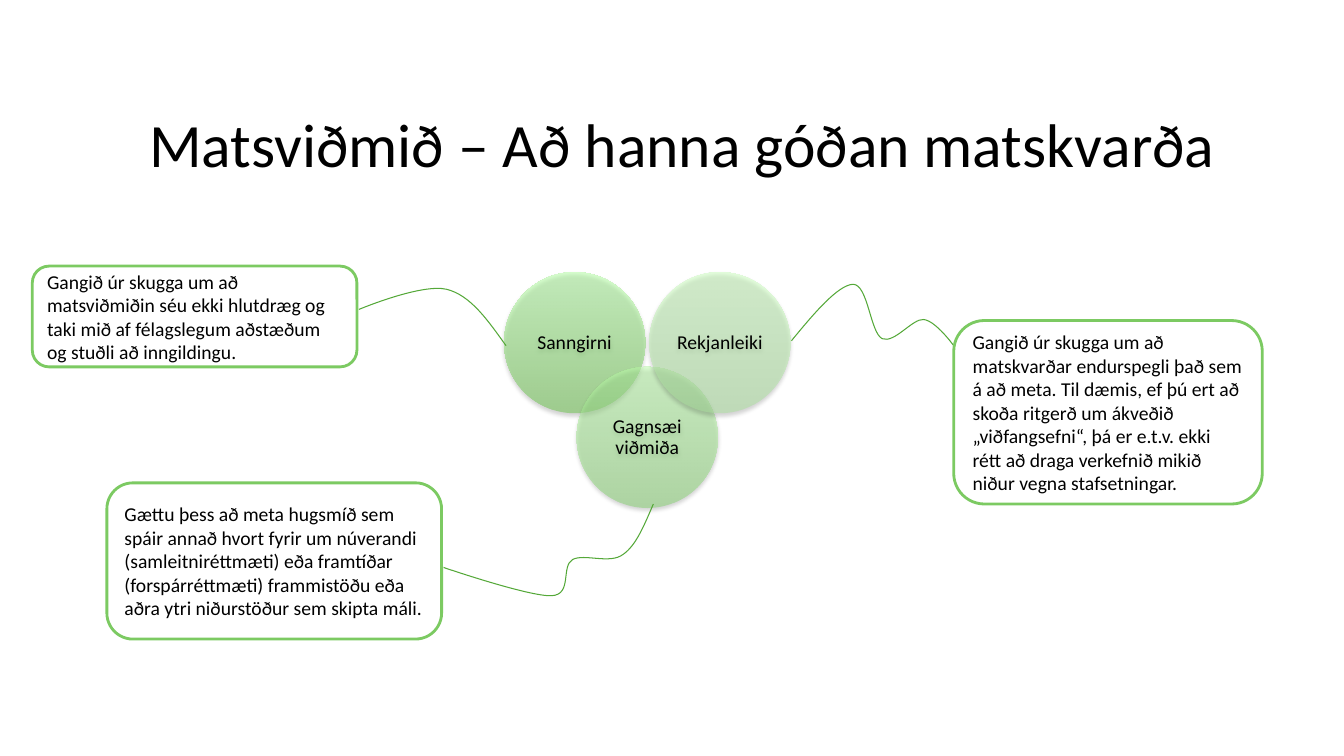
import pptx
import pptx.dml.color
import pptx.enum.shapes
import pptx.enum.text
import pptx.oxml.ns
import pptx.util
from lxml import etree
from pptx.util import Inches

COLORS = {"text": "000000", "box": "FFFFFF", "border": "7CCA62", "curve": "54A838"}
FONT = "Calibri"
SHAPES = pptx.enum.shapes.MSO_SHAPE
ALIGN = pptx.enum.text.PP_ALIGN
QN = pptx.oxml.ns.qn

CIRCLE_SIZE = 1.4
CIRCLES = [
    ("Sanngirni", 5, 2.7, "69C449", "B0FF9F"),
    ("Gagnsæi viðmiða", 5.72, 3.64, "87D372", "BCFFAA"),
    ("Rekjanleiki", 6.44, 2.7, "ABE19E", "CBFFBD"),
]
NOTES = [
    ((0.32, 2.64, 3.22, 1),
     "Gangið úr skugga um að matsviðmiðin séu ekki hlutdræg og taki mið af "
     "félagslegum aðstæðum og stuðli að inngildingu."),
    ((1.06, 4.79, 3.32, 1.55),
     "Gættu þess að meta hugsmíð sem spáir annað hvort fyrir um núverandi "
     "(samleitniréttmæti) eða framtíðar (forspárréttmæti) frammistöðu eða "
     "aðra ytri niðurstöður sem skipta máli."),
    ((9.46, 3.18, 3.06, 1.82),
     "Gangið úr skugga um að matskvarðar endurspegli það sem á að meta. Til "
     "dæmis, ef þú ert að skoða ritgerð um ákveðið „viðfangsefni“, þá er "
     "e.t.v. ekki rétt að draga verkefnið mikið niður vegna stafsetningar."),
]
# Each curve: start point, then three Bézier points per segment.
CURVES = [
    [(7.85, 3.38), (8.08, 3.1), (8.31, 2.83), (8.46, 2.82),
     (8.61, 2.82), (8.63, 3.3), (8.75, 3.36),
     (8.87, 3.41), (9.05, 3.16), (9.16, 3.17),
     (9.28, 3.18), (9.46, 3.43), (9.46, 3.43)],
    [(5.02, 3.43), (4.84, 3.18), (4.67, 2.93), (4.43, 2.87),
     (4.18, 2.81), (3.56, 3.07), (3.56, 3.07)],
    [(6.48, 5), (6.39, 5.21), (6.31, 5.41), (6.18, 5.5),
     (6.05, 5.6), (5.8, 5.49), (5.68, 5.55),
     (5.56, 5.62), (5.68, 5.9), (5.47, 5.91),
     (5.25, 5.92), (4.4, 5.63), (4.4, 5.63)],
]


def rgb(value):
    return pptx.dml.color.RGBColor.from_string(value)


class SlideBuilder:
    """Draws styled elements on the current page."""

    def __init__(self, page):
        self.page = page

    def set_text(self, shape, text, size, align, spacing=1.0, inset=(0.1, 0.05)):
        frame = shape.text_frame
        frame.word_wrap = True
        frame.vertical_anchor = pptx.enum.text.MSO_ANCHOR.MIDDLE
        frame.margin_left = frame.margin_right = Inches(inset[0])
        frame.margin_top = frame.margin_bottom = Inches(inset[1])
        frame.text = text
        para = frame.paragraphs[0]
        para.alignment = align
        para.line_spacing = spacing
        span = para.runs[0]
        span.font.name = FONT
        span.font.size = pptx.util.Pt(size)
        span.font.color.rgb = rgb(COLORS["text"])

    def title(self, text, place):
        box = self.page.shapes.add_textbox(*map(Inches, place))
        self.set_text(box, text, 44, ALIGN.CENTER, 0.9)

    def circle(self, text, left, top, dark, light):
        circle = self.page.shapes.add_shape(
            SHAPES.OVAL, Inches(left), Inches(top),
            Inches(CIRCLE_SIZE), Inches(CIRCLE_SIZE))
        circle.line.fill.background()
        circle.fill.gradient()
        circle.fill.gradient_angle = 90
        for stop, color in zip(circle.fill.gradient_stops, (dark, light)):
            stop.color.rgb = rgb(color)
        for color in circle._element.spPr.iter(QN("a:srgbClr")):
            etree.SubElement(color, QN("a:alpha"), val="49000")
        self.soft_shadow(circle)
        self.set_text(circle, text, 14, ALIGN.CENTER, 0.9, (0.06, 0.06))

    def soft_shadow(self, shape):
        shape.shadow.inherit = False
        effects = shape._element.spPr.find(QN("a:effectLst"))
        shadow = etree.SubElement(
            effects, QN("a:outerShdw"), blurRad=str(pptx.util.Pt(3.1)),
            dist=str(pptx.util.Pt(1.8)), dir="5400000", rotWithShape="0")
        color = etree.SubElement(shadow, QN("a:srgbClr"), val=COLORS["text"])
        etree.SubElement(color, QN("a:alpha"), val="35000")

    def note(self, place, text):
        box = self.page.shapes.add_shape(
            SHAPES.ROUNDED_RECTANGLE, *map(Inches, place))
        box.shadow.inherit = False
        box.fill.solid()
        box.fill.fore_color.rgb = rgb(COLORS["box"])
        box.line.color.rgb = rgb(COLORS["border"])
        box.line.width = pptx.util.Pt(2)
        self.set_text(box, text, 14, ALIGN.LEFT)

    def curve(self, points):
        """Draw a freeform, then merge every three line steps into one Bézier."""
        start, *rest = [(Inches(x), Inches(y)) for x, y in points]
        builder = self.page.shapes.build_freeform(*start)
        builder.add_line_segments(rest, close=False)
        shape = builder.convert_to_shape()
        shape.shadow.inherit = False
        shape.fill.background()
        shape.line.color.rgb = rgb(COLORS["curve"])
        shape.line.width = pptx.util.Pt(0.75)
        outline = next(shape._element.iter(QN("a:path")))
        steps = outline.findall(QN("a:lnTo"))
        for first in range(0, len(steps), 3):
            bezier = etree.SubElement(outline, QN("a:cubicBezTo"))
            for step in steps[first:first + 3]:
                bezier.append(step[0])
                outline.remove(step)


def main():
    deck = pptx.Presentation()
    deck.slide_width = Inches(13.33)
    deck.slide_height = Inches(7.5)
    slide = SlideBuilder(deck.slides.add_slide(deck.slide_layouts[6]))
    slide.title("Matsviðmið – Að hanna góðan matskvarða", (1.02, 0.79, 11.5, 1.35))
    for circle in CIRCLES:
        slide.circle(*circle)
    for points in CURVES:
        slide.curve(points)
    for place, text in NOTES:
        slide.note(place, text)
    deck.save("out.pptx")


if __name__ == "__main__":
    main()
